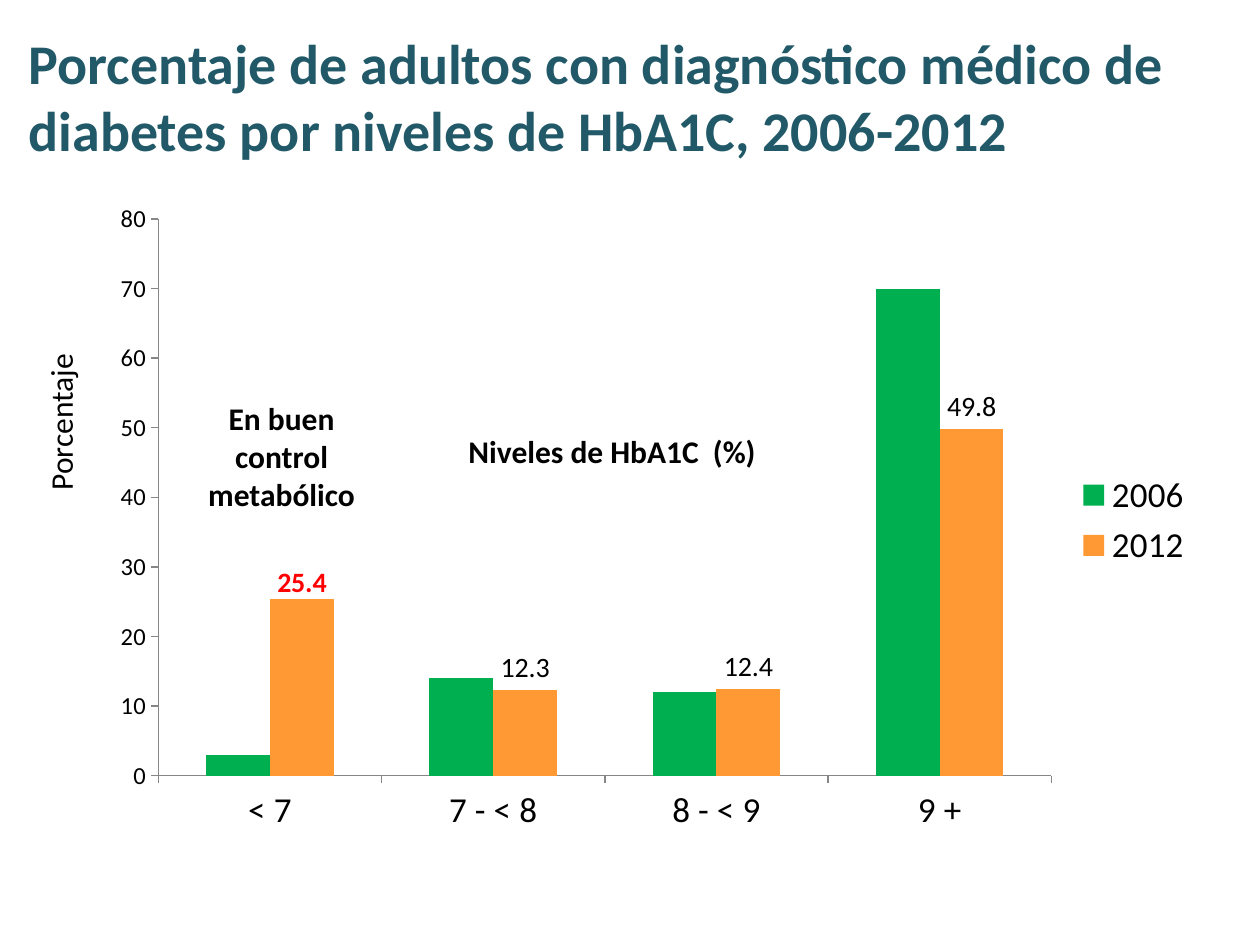
import lxml.etree
import pptx
import pptx.chart.data
import pptx.dml.color
import pptx.enum.chart
import pptx.enum.text
import pptx.oxml
import pptx.oxml.ns
import pptx.util
from pptx.util import Inches

FONT = "Calibri"
BLACK = "000000"


def color(value):
    return pptx.dml.color.RGBColor.from_string(value)


def add_text(text, left, top, width, height, size=18, ink=BLACK, bold=True, wrap=True):
    box = slide.shapes.add_textbox(Inches(left), Inches(top), Inches(width), Inches(height))
    box.text_frame.text = text
    box.text_frame.word_wrap = wrap
    font = box.text_frame.paragraphs[0].runs[0].font
    font.name, font.size, font.bold = FONT, pptx.util.Pt(size), bold
    font.color.rgb = color(ink)
    return box.text_frame


presentation = pptx.Presentation()
presentation.slide_width, presentation.slide_height = Inches(10), Inches(7.5)
slide = presentation.slides.add_slide(presentation.slide_layouts[6])

# Chart of HbA1C levels
levels = pptx.chart.data.CategoryChartData()
levels.categories = ["< 7", "7 - < 8", "8 - < 9", "9 +"]
levels.add_series("2006", (3, 14, 12, 70))
levels.add_series("2012", (25.4, 12.3, 12.4, 49.8))
chart = slide.shapes.add_chart(
    pptx.enum.chart.XL_CHART_TYPE.COLUMN_CLUSTERED,
    Inches(0.82), Inches(1.53), Inches(8.75), Inches(5.2), levels).chart
chart.has_title = False
chart.font.name, chart.font.size = FONT, pptx.util.Pt(20)
chart.font.color.rgb = color(BLACK)
chart.has_legend = True
chart.legend.position = pptx.enum.chart.XL_LEGEND_POSITION.RIGHT
chart.legend.include_in_layout = False

# Bars
bars = chart.plots[0]
bars.gap_width, bars.overlap = 150, 0
bars.vary_by_categories = False
for year, fill in zip(bars.series, ("00B050", "FF9933")):
    year.format.fill.solid()
    year.format.fill.fore_color.rgb = color(fill)
    year.invert_if_negative = False

# Axes
for axis in (chart.category_axis, chart.value_axis):
    axis.has_major_gridlines = False
    axis.major_tick_mark = pptx.enum.chart.XL_TICK_MARK.OUTSIDE
    axis.format.line.color.rgb = color("868686")
    axis.format.line.width = pptx.util.Pt(0.75)
chart.value_axis.minimum_scale, chart.value_axis.maximum_scale = 0, 80
chart.value_axis.major_unit = 10
chart.value_axis.tick_labels.font.size = pptx.util.Pt(14)

# Value labels for 2012, with the well-controlled group in red
year_2012 = bars.series[1]
labels = year_2012.data_labels
labels.show_value = True
labels.position = pptx.enum.chart.XL_LABEL_POSITION.OUTSIDE_END
labels.font.size = pptx.util.Pt(16)
controlled = year_2012.points[0].data_label
controlled.font.size, controlled.font.bold = pptx.util.Pt(16), True
controlled.font.color.rgb = color("FF0000")
controlled.position = pptx.enum.chart.XL_LABEL_POSITION.OUTSIDE_END

# Fixed plot area, and the red label moved closer to its bar
ns = pptx.oxml.ns.nsdecls("c")
plot_layout = pptx.oxml.parse_xml(
    f'<c:layout {ns}><c:manualLayout><c:layoutTarget val="inner"/>'
    '<c:xMode val="edge"/><c:yMode val="edge"/><c:x val="0.05"/><c:y val="0.04"/>'
    '<c:w val="0.81"/><c:h val="0.85"/></c:manualLayout></c:layout>')
label_layout = pptx.oxml.parse_xml(
    f'<c:layout {ns}><c:manualLayout><c:x val="0"/><c:y val="0.01"/>'
    '</c:manualLayout></c:layout>')
plot_area = chart.element.find(".//" + pptx.oxml.ns.qn("c:plotArea"))
for old_layout in plot_area.findall(pptx.oxml.ns.qn("c:layout")):
    plot_area.remove(old_layout)
plot_area.insert(0, plot_layout)
chart.element.find(".//" + pptx.oxml.ns.qn("c:dLbl")).insert(1, label_layout)

# Title
title = add_text(
    "Porcentaje de adultos con diagnóstico médico de diabetes por niveles de HbA1C, 2006-2012",
    0.13, 0.13, 9.45, 1.26, size=32, ink="215968")
title.vertical_anchor = pptx.enum.text.MSO_ANCHOR.MIDDLE

# Axis names and note
percentage = add_text("Porcentaje", 0.28, 2.8, 0.5, 1.19, bold=False, wrap=False)
percentage._txBody.bodyPr.set("vert", "vert270")
add_text("Niveles de HbA1C  (%)", 3.62, 3.38, 2.5, 0.4, wrap=False)
control_note = add_text("En buen control metabólico", 1.45, 3.12, 1.57, 1.01)
control_note.paragraphs[0].alignment = pptx.enum.text.PP_ALIGN.CENTER

presentation.save("out.pptx")
